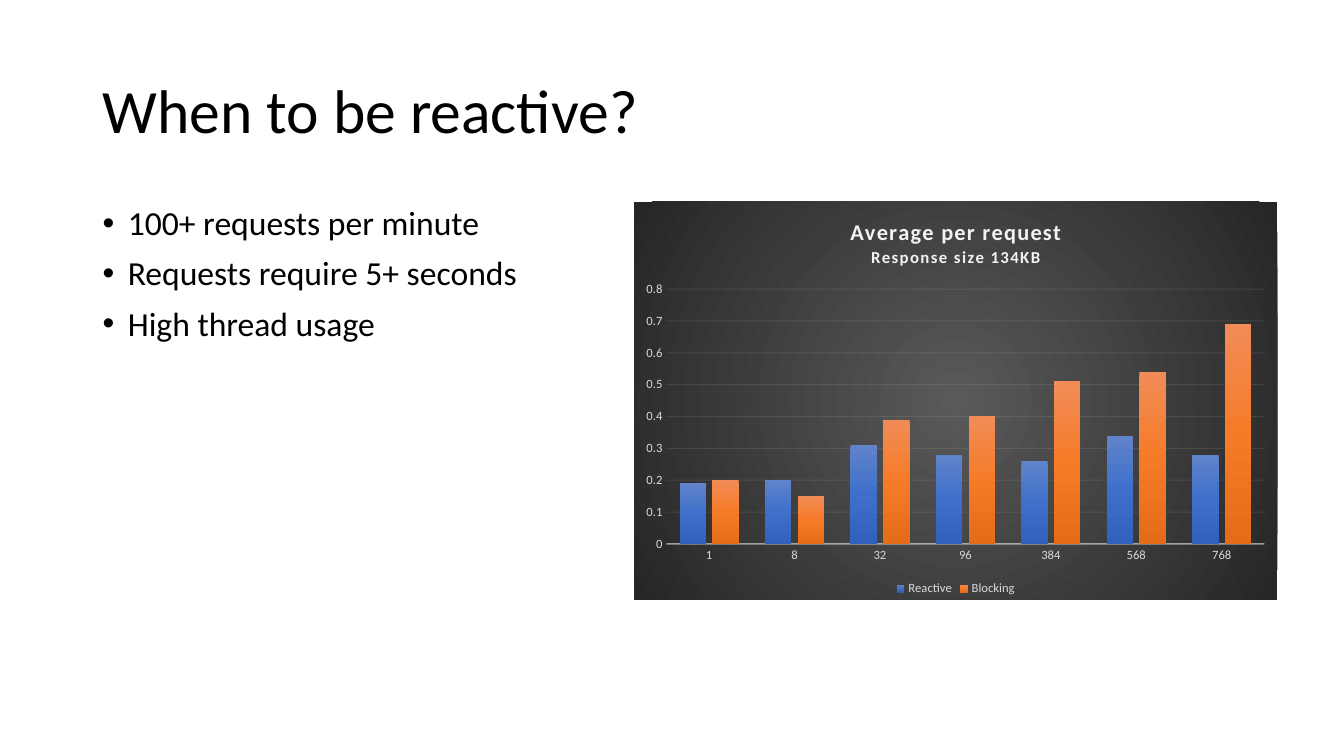
import lxml.etree
import pptx
import pptx.chart.data
import pptx.dml.color
import pptx.enum.chart
import pptx.enum.text
import pptx.oxml
import pptx.oxml.ns
import pptx.util

Inches = pptx.util.Inches
Pt = pptx.util.Pt
RGBColor = pptx.dml.color.RGBColor
qn = pptx.oxml.ns.qn

FONT = "Calibri"
BLACK = RGBColor(0x00, 0x00, 0x00)
LABEL_GREY = RGBColor(0xD9, 0xD9, 0xD9)
LINE_GREY = RGBColor(0xF2, 0xF2, 0xF2)
BACKDROP = [(0, RGBColor(0x59, 0x59, 0x59)), (100, RGBColor(0x26, 0x26, 0x26))]
BLUES = [(0, RGBColor(0x61, 0x83, 0xCB)), (50, RGBColor(0x3E, 0x70, 0xCA)),
         (100, RGBColor(0x30, 0x62, 0xBB))]
ORANGES = [(0, RGBColor(0xF1, 0x8C, 0x57)), (50, RGBColor(0xF6, 0x7B, 0x28)),
           (100, RGBColor(0xE5, 0x6C, 0x19))]
LINEAR = '<a:lin ang="5400000" scaled="0"/>'
RADIAL = ('<a:path path="circle"><a:fillToRect l="50000" t="50000" '
          'r="50000" b="50000"/></a:path>')


def gradient_properties(stops, direction):
    """Return a chart spPr element with a gradient fill and no outline."""
    marks = "".join(f'<a:gs pos="{place * 1000}"><a:srgbClr val="{color}"/></a:gs>'
                    for place, color in stops)
    return pptx.oxml.parse_xml(
        f'<c:spPr {pptx.oxml.ns.nsdecls("c", "a")}><a:gradFill><a:gsLst>{marks}</a:gsLst>'
        f'{direction}</a:gradFill><a:ln><a:noFill/></a:ln></c:spPr>')


def style_font(font, size, color):
    font.name = FONT
    font.size = Pt(size)
    font.color.rgb = color


deck = pptx.Presentation()
deck.slide_width = Inches(13.33)
deck.slide_height = Inches(7.5)
page = deck.slides.add_slide(deck.slide_layouts[6])

# Title
title_box = page.shapes.add_textbox(Inches(0.92), Inches(0.4), Inches(11.5), Inches(1.45))
title_box.text_frame.word_wrap = True
title_box.text_frame.vertical_anchor = pptx.enum.text.MSO_ANCHOR.MIDDLE
para = title_box.text_frame.paragraphs[0]
para.line_spacing = 0.9
span = para.add_run()
span.text = "When to be reactive?"
style_font(span.font, 44, BLACK)

# Bullets
body_box = page.shapes.add_textbox(Inches(0.92), Inches(2), Inches(11.5), Inches(4.76))
body = body_box.text_frame
body.word_wrap = True
points = ["100+ requests per minute", "Requests require 5+ seconds", "High thread usage"]
for index, point in enumerate(points):
    para = body.add_paragraph() if index else body.paragraphs[0]
    para.line_spacing = 0.9
    para.space_before = Pt(10)
    span = para.add_run()
    span.text = point
    style_font(span.font, 24, BLACK)
    settings = para._p.get_or_add_pPr()
    settings.set("marL", str(Inches(0.25)))
    settings.set("indent", str(-Inches(0.25)))
    lxml.etree.SubElement(settings, qn("a:buFont"), typeface="Arial")
    lxml.etree.SubElement(settings, qn("a:buChar"), char="•")

# Chart
data = pptx.chart.data.CategoryChartData()
data.categories = ["1", "8", "32", "96", "384", "568", "768"]
data.add_series("Reactive", [0.19, 0.2, 0.31, 0.28, 0.26, 0.34, 0.28])
data.add_series("Blocking", [0.2, 0.15, 0.39, 0.4, 0.51, 0.54, 0.69])
chart = page.shapes.add_chart(
    pptx.enum.chart.XL_CHART_TYPE.COLUMN_CLUSTERED,
    Inches(6.29), Inches(2), Inches(6.38), Inches(3.95), data).chart
style_font(chart.font, 10, BLACK)
chart_root = chart.element
chart_root.find(qn("c:chart")).addnext(gradient_properties(BACKDROP, RADIAL))

chart.has_title = True
heading = chart.chart_title.text_frame
for index, (line, size) in enumerate([("Average per request", 16), ("Response size 134KB", 12)]):
    para = heading.add_paragraph() if index else heading.paragraphs[0]
    span = para.add_run()
    span.text = line
    style_font(span.font, size, LINE_GREY)
    span.font.bold = True
    span._r.get_or_add_rPr().set("spc", "100")

plot = chart.plots[0]
plot.gap_width = 100
plot.overlap = -24
plot.vary_by_categories = False
for series, stops in zip(plot.series, [BLUES, ORANGES]):
    series.invert_if_negative = False
    series.format.fill.solid()
    properties = series._element.find(qn("c:spPr"))
    properties.getparent().replace(properties, gradient_properties(stops, LINEAR))

for axis in (chart.category_axis, chart.value_axis):
    axis.major_tick_mark = pptx.enum.chart.XL_TICK_MARK.NONE
    axis.minor_tick_mark = pptx.enum.chart.XL_TICK_MARK.NONE
    style_font(axis.tick_labels.font, 9, LABEL_GREY)
values = chart.value_axis
values.minimum_scale = 0
values.maximum_scale = 0.8
values.major_unit = 0.1
values.tick_labels.number_format = "General"
values.tick_labels.number_format_is_linked = False
values.format.line.fill.background()
values.has_major_gridlines = True

faint_lines = [
    (chart.category_axis.format.line, 1, 54, "c:catAx/c:spPr"),
    (values.major_gridlines.format.line, 0.75, 10, "c:valAx/c:majorGridlines"),
]
for line, width, opacity, place in faint_lines:
    line.width = Pt(width)
    line.color.rgb = LINE_GREY
    for color in chart_root.xpath(f".//{place}//a:srgbClr"):
        lxml.etree.SubElement(color, qn("a:alpha"), val=str(opacity * 1000))

chart.has_legend = True
chart.legend.position = pptx.enum.chart.XL_LEGEND_POSITION.BOTTOM
chart.legend.include_in_layout = False
style_font(chart.legend.font, 9, LABEL_GREY)

# Inner plot area, as shares of the chart frame
plot_area = chart_root.find(".//" + qn("c:plotArea"))
for old_layout in plot_area.findall(qn("c:layout")):
    plot_area.remove(old_layout)
layout = lxml.etree.Element(qn("c:layout"))
plot_area.insert(0, layout)
manual = lxml.etree.SubElement(layout, qn("c:manualLayout"))
for tag, value in [("layoutTarget", "inner"), ("xMode", "edge"), ("yMode", "edge"),
                   ("x", "0.05"), ("y", "0.22"), ("w", "0.93"), ("h", "0.64")]:
    lxml.etree.SubElement(manual, qn("c:" + tag), val=value)

deck.save("out.pptx")
